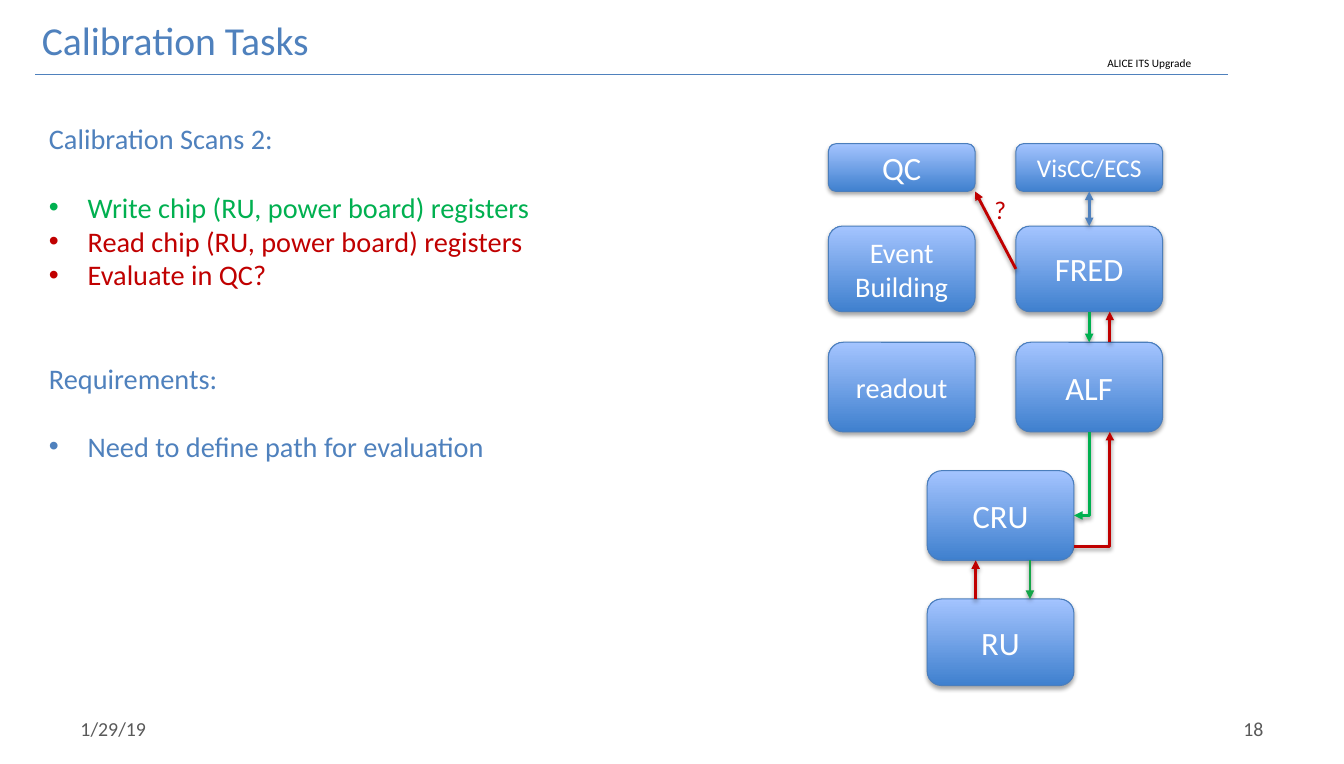
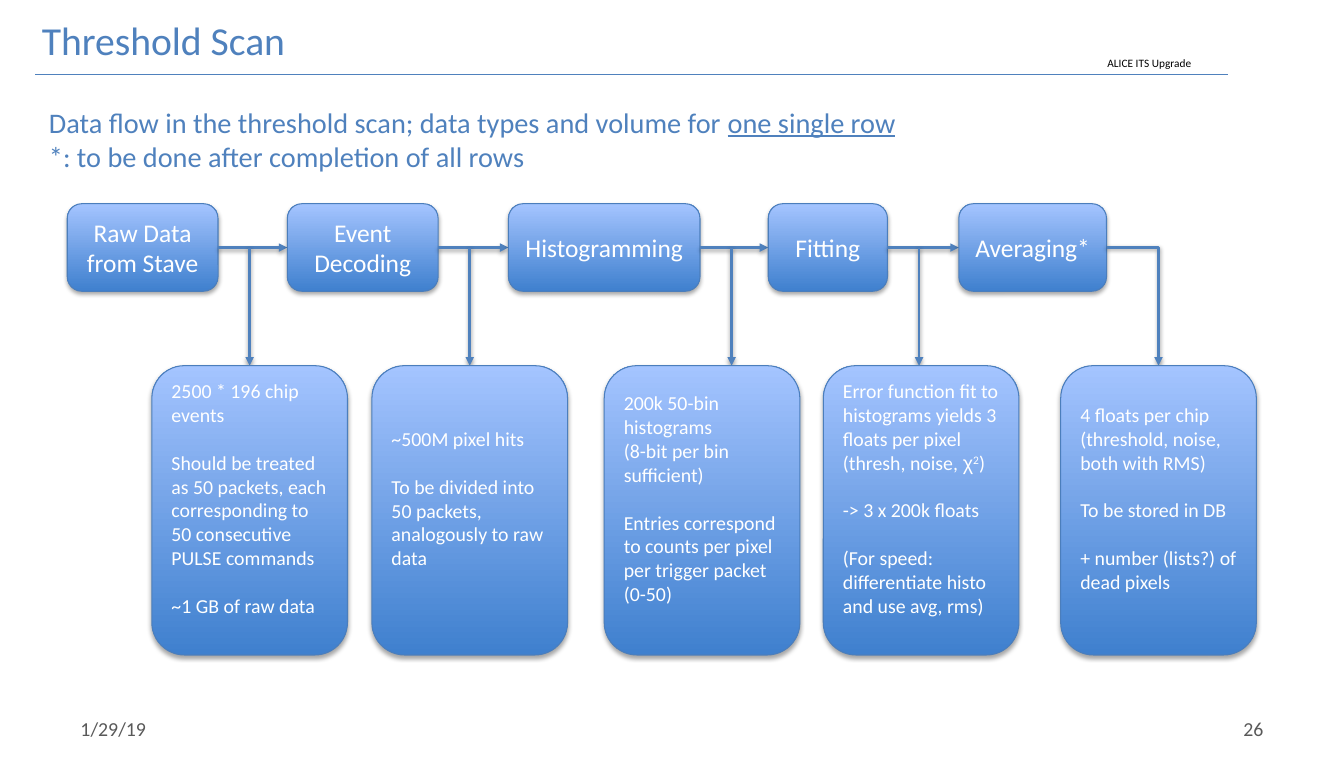
from dataclasses import dataclass

from lxml import etree
from pptx import Presentation
from pptx.dml.color import RGBColor
from pptx.enum.shapes import MSO_CONNECTOR, MSO_SHAPE
from pptx.enum.text import MSO_ANCHOR, MSO_AUTO_SIZE, PP_ALIGN
from pptx.oxml.ns import qn
from pptx.util import Inches, Pt

BLUE, GREEN, RED = "4F81BD", "00B050", "C00000"
WHITE, BLACK, GREY = "FFFFFF", "000000", "595959"
BOX_TOP, BOX_BOTTOM, BOX_EDGE = "A4C4FF", "3F80CE", "4B7EBC"
WIDTH, HEIGHT = 13.19, 7.5
FONT = "Calibri"
LINE_HEIGHT = 1.22  # line pitch as a multiple of the font size


@dataclass
class Line:
    """One paragraph; spans is a text or a list of (text, format) pairs."""
    spans: object
    gap: int = 0  # empty lines above
    bullet: bool = False
    color: str = None


SCAN_LINES = [
    Line("Calibration Scans 2:"),
    Line("Write chip (RU, power board) registers", 1, True, GREEN),
    Line("Read chip (RU, power board) registers", 0, True, RED),
    Line("Evaluate in QC?", 0, True, RED),
    Line("Requirements:", 2),
    Line("Need to define path for evaluation", 1, True),
]

COLUMNS = {"left": 8.13, "middle": 9.1, "right": 9.97}
COLUMN_WIDTH = 1.44
ROWS = [(1.41, 0.47), (2.22, 0.84), (3.36, 0.88), (4.62, 0.88), (5.88, 0.85)]
SYSTEMS = [  # text, column, row, font size
    ("QC", "left", 0, 23), ("VisCC/ECS", "right", 0, 18),
    ("Event Building", "left", 1, 20), ("FRED", "right", 1, 23),
    ("readout", "left", 2, 20), ("ALF", "right", 2, 23),
    ("CRU", "middle", 3, 23), ("RU", "middle", 4, 23),
]
LINKS = [  # from box and share of its size, to box and share, format
    ("CRU", (1, 0.85), "ALF", (0.64, 1), dict(color=RED, bent=True)),
    ("ALF", (0.64, 0), "FRED", (0.64, 1), dict(color=RED)),
    ("FRED", (0, 0.5), "QC", (1, 1), dict(color=RED)),
    ("FRED", (0.5, 0), "VisCC/ECS", (0.5, 1), dict(ends=("head", "tail"))),
    ("FRED", (0.5, 1), "ALF", (0.5, 0), dict(color=GREEN)),
    ("CRU", (1, 0.5), "ALF", (0.5, 1), dict(color=GREEN, bent=True, ends=("head",))),
    ("CRU", (0.7, 1), "RU", (0.7, 0), dict(color="15A548")),
    ("RU", (0.33, 0), "CRU", (0.33, 1), dict(color=RED)),
]

FLOW_LINES = [
    Line([("Data flow in the threshold scan; data types and volume for ", {}),
          ("one single row", dict(underline=True))]),
    Line("*: to be done after completion of all rows"),
]
STEP_TOP, STEP_HEIGHT = 2, 0.86
DETAIL_TOP, DETAIL_WIDTH, DETAIL_HEIGHT = 3.59, 1.92, 2.84
DROP_OFFSET = 0.31
STEPS = [  # text, left, width, left of the detail box, detail lines
    ("Raw Data from Stave", 0.66, 1.48, 1.49, [
        Line("2500 * 196 chip events"),
        Line("Should be treated as 50 packets, each corresponding to "
             "50 consecutive PULSE commands", 1),
        Line("~1 GB of raw data", 1)]),
    ("Event Decoding", 2.82, 1.48, 3.65, [
        Line("~500M pixel hits"),
        Line("To be divided into 50 packets, analogously to raw data", 1)]),
    ("Histogramming", 4.99, 1.88, 5.93, [
        Line("200k 50-bin histograms"),
        Line("(8-bit per bin sufficient)"),
        Line("Entries correspond to counts per pixel per trigger packet (0-50)", 1)]),
    ("Fitting", 7.54, 1.17, 8.08, [
        Line("Error function fit to histograms yields 3 floats per pixel"),
        Line([("(thresh, noise, ", {}), ("χ", dict(font="Arial")),
              ("2", dict(raised=True)), (")", {})]),
        Line("-> 3 x 200k floats", 1),
        Line("(For speed: differentiate histo and use avg, rms)", 1)]),
    ("Averaging*", 9.41, 1.45, 10.41, [
        Line("4 floats per chip"),
        Line("(threshold, noise, both with RMS)"),
        Line("To be stored in DB", 1),
        Line("+ number (lists?) of dead pixels", 1)]),
]


def rgb(color):
    return RGBColor.from_string(color)


def add_span(para, text, size, color, font=FONT, underline=None, raised=False):
    span = para.add_run()
    span.text = text
    span.font.name, span.font.size = font, Pt(size)
    span.font.color.rgb = rgb(color)
    span.font.underline = underline
    if raised:
        span.font._element.set("baseline", "30000")


def set_bullet(para, bullet):
    properties = para._p.get_or_add_pPr()
    indent = Inches(0.38) if bullet else 0
    properties.set("marL", str(indent))
    properties.set("indent", str(-indent))
    if bullet:
        etree.SubElement(properties, qn("a:buChar")).set("char", "•")
    else:
        etree.SubElement(properties, qn("a:buNone"))


def write(shape, lines, size=20, color=BLUE, align=PP_ALIGN.LEFT,
          anchor=MSO_ANCHOR.TOP, wrap=True):
    """Fill a shape with one text or a list of Line."""
    frame = shape.text_frame
    frame.word_wrap, frame.auto_size = wrap, MSO_AUTO_SIZE.NONE
    frame.vertical_anchor = anchor
    if isinstance(lines, str):
        lines = [Line(lines)]
    for index, line in enumerate(lines):
        para = frame.add_paragraph() if index else frame.paragraphs[0]
        set_bullet(para, line.bullet)
        para.alignment = align
        para.space_before = Pt(line.gap * size * LINE_HEIGHT)
        spans = [(line.spans, {})] if isinstance(line.spans, str) else line.spans
        for text, style in spans:
            add_span(para, text, size, line.color or color, **style)


def place(shape, *bounds):
    shape.left, shape.top, shape.width, shape.height = map(Inches, bounds)


def add_label(page, text, bounds, **style):
    label = page.shapes.add_textbox(*map(Inches, bounds))
    write(label, text, **style)
    return label


def add_shadow(shape, distance, opacity):
    effects = etree.SubElement(shape._element.spPr, qn("a:effectLst"))
    shadow = etree.SubElement(effects, qn("a:outerShdw"), blurRad="40000",
                              dist=str(distance), dir="5400000", rotWithShape="0")
    black = etree.SubElement(shadow, qn("a:srgbClr"), val=BLACK)
    etree.SubElement(black, qn("a:alpha"), val=str(opacity * 1000))


def add_box(page, lines, bounds, size, align=PP_ALIGN.CENTER):
    box = page.shapes.add_shape(MSO_SHAPE.ROUNDED_RECTANGLE, *map(Inches, bounds))
    box.fill.gradient()
    box.fill.gradient_angle = 90
    for stop, color in zip(box.fill.gradient_stops, (BOX_BOTTOM, BOX_TOP)):
        stop.color.rgb = rgb(color)
    box.line.color.rgb = rgb(BOX_EDGE)
    box.line.width = Pt(0.75)
    add_shadow(box, 23000, 35)
    write(box, lines, size=size, color=WHITE, align=align, anchor=MSO_ANCHOR.MIDDLE)
    return box


def add_line(page, begin, end, color=BLUE, width=2, bent=False):
    kind = MSO_CONNECTOR.ELBOW if bent else MSO_CONNECTOR.STRAIGHT
    line = page.shapes.add_connector(kind, *map(Inches, begin + end))
    line.line.color.rgb = rgb(color)
    line.line.width = Pt(width)
    if bent:
        line._element.spPr.find(qn("a:prstGeom")).set("prst", "bentConnector2")
    return line


def add_arrow(page, begin, end, ends=("tail",), **style):
    """Draw an arrow; a bent one leaves sideways and arrives upright."""
    arrow = add_line(page, begin, end, **style)
    for name in ends:
        etree.SubElement(arrow.line._get_or_add_ln(), qn(f"a:{name}End"), type="triangle")
    add_shadow(arrow, 20000, 38)


def add_page(deck, title, number, lines, body_top, body_height):
    page = deck.slides.add_slide(deck.slide_layouts[1])
    title_box, body = page.placeholders
    write(title_box, title, size=28, anchor=MSO_ANCHOR.MIDDLE)
    place(body, 0.38, body_top, 11.62, body_height)
    write(body, lines)
    footers = [("1/29/19", 0.66, PP_ALIGN.LEFT),
               (number, WIDTH - 0.66 - 3.08, PP_ALIGN.RIGHT)]
    for text, left, align in footers:
        footer = add_label(page, text, (left, 6.95, 3.08, 0.4), size=14, color=GREY,
                           align=align, anchor=MSO_ANCHOR.MIDDLE)
        footer.text_frame.margin_left = footer.text_frame.margin_right = Inches(0.13)
    return page


def add_header(layout, page):
    """Draw the rule and project label on a page and move them to its layout."""
    rule = add_line(page, (12.05, 0.73), (0.34, 0.73), width=0.75)
    etree.SubElement(rule._element.spPr, qn("a:effectLst"))
    label = add_label(page, "ALICE ITS Upgrade", (10.77, 0.5, 1.03, 0.24),
                      size=8, color=BLACK, wrap=False)
    for shape in (rule, label):
        layout.shapes.element.append(shape._element)


def draw_systems(page):
    bounds = {}
    for text, column, row, size in SYSTEMS:
        top, height = ROWS[row]
        bounds[text] = (COLUMNS[column], top, COLUMN_WIDTH, height)
        add_box(page, text, bounds[text], size)

    def point(name, share):
        left, top, width, height = bounds[name]
        return left + share[0] * width, top + share[1] * height

    for source, source_share, target, target_share, style in LINKS:
        add_arrow(page, point(source, source_share), point(target, target_share), **style)
    add_label(page, "?", (9.66, 1.86, 0.32, 0.4), size=18, color=RED, wrap=False)


def draw_flow(page):
    middle = STEP_TOP + STEP_HEIGHT / 2
    for index, (text, left, width, detail_left, details) in enumerate(STEPS):
        right = left + width
        add_box(page, text, (left, STEP_TOP, width, STEP_HEIGHT), 18)
        if index + 1 < len(STEPS):
            add_arrow(page, (right, middle), (STEPS[index + 1][1], middle))
            drop = right + DROP_OFFSET
            add_arrow(page, (drop, middle), (drop, DETAIL_TOP))
        else:
            drop = detail_left + DETAIL_WIDTH / 2
            add_arrow(page, (right, middle), (drop, DETAIL_TOP), bent=True)
        detail = add_box(page, details,
                         (detail_left, DETAIL_TOP, DETAIL_WIDTH, DETAIL_HEIGHT),
                         14, PP_ALIGN.LEFT)
        detail.text_frame.margin_bottom = Inches(0.05) + Pt(14 * LINE_HEIGHT)


def main():
    deck = Presentation()
    deck.slide_width, deck.slide_height = Inches(WIDTH), Inches(HEIGHT)
    layout = deck.slide_layouts[1]
    place(layout.placeholders[0], 0.31, 0.1, 10, 0.57)
    calibration = add_page(deck, "Calibration Tasks", "18", SCAN_LINES, 1.14, 3.74)
    add_header(layout, calibration)
    draw_systems(calibration)
    threshold = add_page(deck, "Threshold Scan", "26", FLOW_LINES, 0.98, 0.8)
    draw_flow(threshold)
    deck.save("out.pptx")


if __name__ == "__main__":
    main()
